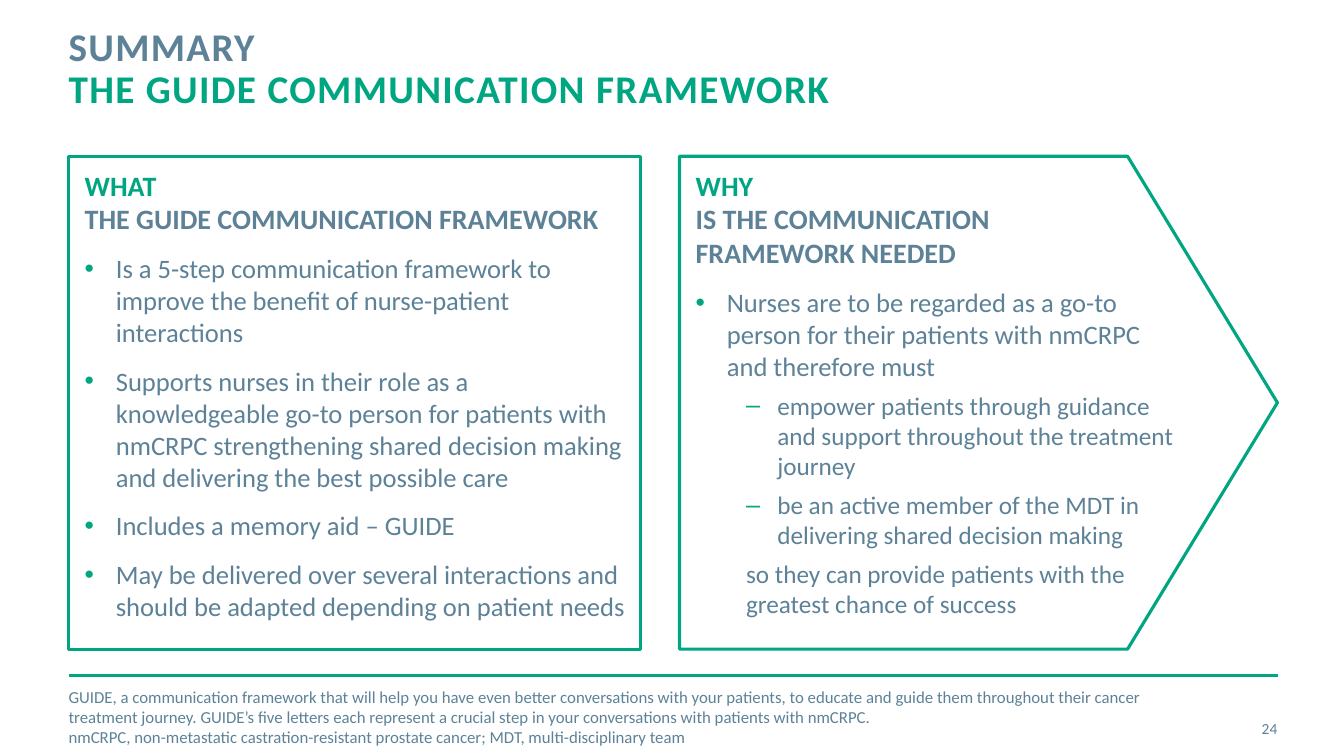
from lxml import etree
from pptx import Presentation
from pptx import util as u
from pptx.dml.color import RGBColor
from pptx.enum import shapes, text
from pptx.oxml.ns import qn

GREEN = RGBColor(0x00, 0xA5, 0x82)
SLATE = RGBColor(0x5D, 0x82, 0x98)
WHITE = RGBColor(0xFF, 0xFF, 0xFF)
FONT = "Calibri"

# A paragraph is (style, [(text, colour), ...]); \v is a line break
TITLE = [("title", [("SUMMARY\v", SLATE), ("THE GUIDE COMMUNICATION FRAMEWORK", GREEN)])]
WHAT = [
    ("heading", [("WHAT\v", GREEN), ("THE GUIDE COMMUNICATION FRAMEWORK", SLATE)]),
    ("bullet", [("Is a 5-step communication framework to improve the benefit of "
                 "nurse-patient interactions", SLATE)]),
    ("bullet", [("Supports nurses in their role as a knowledgeable go-to person for patients "
                 "with nmCRPC strengthening shared decision making and delivering the best "
                 "possible care", SLATE)]),
    ("bullet", [("Includes a memory aid – GUIDE", SLATE)]),
    ("bullet", [("May be delivered over several interactions and should be adapted "
                 "depending on patient needs", SLATE)]),
]
WHY = [
    ("heading", [("WHY\v", GREEN), ("IS THE COMMUNICATION\vFRAMEWORK NEEDED", SLATE)]),
    ("bullet", [("Nurses are to be regarded as a go-to\vperson for their patients with nmCRPC"
                 "\vand therefore must", SLATE)]),
    ("dash", [("empower patients through guidance and support throughout the treatment "
               "journey", SLATE)]),
    ("dash", [("be an active member of the MDT in delivering shared decision making", SLATE)]),
    ("closing", [("so they can provide patients with the greatest chance of success", SLATE)]),
]
FOOTNOTE = [
    ("footnote", [("GUIDE, a communication framework that will help you have even better "
                   "conversations with your patients, to educate and guide them throughout "
                   "their cancer treatment journey. GUIDE’s five letters each represent a "
                   "crucial step in your conversations with patients with nmCRPC.", SLATE)]),
    ("footnote", [("nmCRPC, non-metastatic castration-resistant prostate cancer; "
                   "MDT, multi-disciplinary team", SLATE)]),
]
PAGE = [("page", [("24", SLATE)])]

# font, paragraph: format values; indent: (margin, first line); bullet; tracking in 1/100 pt
BOLD = {"bold": True}
STYLES = {
    "title": dict(font={"size": u.Pt(28), **BOLD}, paragraph={"line_spacing": u.Pt(30)},
                  tracking=100),
    "heading": dict(font={"size": u.Pt(20), **BOLD}),
    "bullet": dict(font={"size": u.Pt(19)}, paragraph={"space_before": u.Pt(12)},
                   indent=(0.31, -0.31), bullet="•"),
    "dash": dict(font={"size": u.Pt(18)}, paragraph={"space_before": u.Pt(6), "level": 1},
                 indent=(0.81, -0.31), bullet="–"),
    "closing": dict(font={"size": u.Pt(18)}, paragraph={"space_before": u.Pt(6), "level": 1},
                    indent=(0.5, 0)),
    "footnote": dict(font={"size": u.Pt(12)}),
    "page": dict(font={"size": u.Pt(11)}, paragraph={"alignment": text.PP_ALIGN.RIGHT}),
}

LEFT, RIGHT = 0.68, 12.68
PANEL_TOP, PANEL_HEIGHT = 1.55, 4.89
RULE_Y = 6.7


def set_values(target, values):
    for name, value in values.items():
        setattr(target, name, value)


def add_bullet(properties, mark):
    colour = etree.SubElement(properties, qn("a:buClr"))
    etree.SubElement(colour, qn("a:srgbClr"), val=str(GREEN))
    etree.SubElement(properties, qn("a:buFont"), typeface="Arial")
    etree.SubElement(properties, qn("a:buChar"), char=mark)


def write(shape, content, insets=(0, 0, 0, 0), anchor=text.MSO_ANCHOR.TOP):
    frame = shape.text_frame
    sides = ("margin_left", "margin_top", "margin_right", "margin_bottom")
    set_values(frame, dict(zip(sides, map(u.Inches, insets))))
    set_values(frame, {"word_wrap": True, "auto_size": text.MSO_AUTO_SIZE.NONE,
                       "vertical_anchor": anchor})
    for index, (style_name, runs) in enumerate(content):
        style = STYLES[style_name]
        paragraph = frame.add_paragraph() if index else frame.paragraphs[0]
        set_values(paragraph, {"alignment": text.PP_ALIGN.LEFT, **style.get("paragraph", {})})
        properties = paragraph._p.get_or_add_pPr()
        margin, first_line = style.get("indent", (0, 0))
        properties.set("marL", str(u.Inches(margin)))
        properties.set("indent", str(u.Inches(first_line)))
        if "bullet" in style:
            add_bullet(properties, style["bullet"])
        for words, colour in runs:
            for part, line in enumerate(words.split("\v")):
                if part:
                    paragraph.add_line_break()
                if not line:
                    continue
                run = paragraph.add_run()
                run.text = line
                set_values(run.font, {"name": FONT, "bold": False, **style["font"]})
                run.font.color.rgb = colour
                if "tracking" in style:
                    run.font._element.set("spc", str(style["tracking"]))


def add_panel(slide, kind, left, width, content, insets):
    panel = slide.shapes.add_shape(kind, *map(u.Inches, (left, PANEL_TOP, width, PANEL_HEIGHT)))
    panel.shadow.inherit = False
    panel.fill.solid()
    panel.fill.fore_color.rgb = WHITE
    panel.line.color.rgb = GREEN
    panel.line.width = u.Pt(2.25)
    write(panel, content, insets)
    return panel


def add_text(slide, box, content):
    holder = slide.shapes.add_textbox(*map(u.Inches, box))
    write(holder, content, anchor=text.MSO_ANCHOR.MIDDLE)


def main():
    deck = Presentation()
    deck.slide_width, deck.slide_height = u.Inches(13.33), u.Inches(7.5)
    slide = deck.slides.add_slide(deck.slide_layouts[5])

    title = slide.shapes.title
    set_values(title, dict(zip(("left", "top", "width", "height"),
                               map(u.Inches, (LEFT, 0.27, 9.56, 0.88)))))
    write(title, TITLE)

    rule = slide.shapes.add_connector(
        shapes.MSO_CONNECTOR.STRAIGHT, *map(u.Inches, (LEFT, RULE_Y, RIGHT, RULE_Y)))
    rule.line.color.rgb = GREEN
    rule.line.width = u.Pt(2)
    etree.SubElement(rule._element.spPr, qn("a:effectLst"))

    add_panel(slide, shapes.MSO_SHAPE.RECTANGLE, LEFT, 5.67, WHAT, (0.16, 0.12, 0.08, 0))
    why = add_panel(slide, shapes.MSO_SHAPE.PENTAGON, 6.74, 5.93, WHY, (0.16, 0.12, 0.1, 0.05))
    why.adjustments[0] = 0.304

    add_text(slide, (LEFT, 6.91, 11.32, 0.4), FOOTNOTE)
    add_text(slide, (11.81, 7.03, 0.86, 0.4), PAGE)
    deck.save("out.pptx")


if __name__ == "__main__":
    main()
